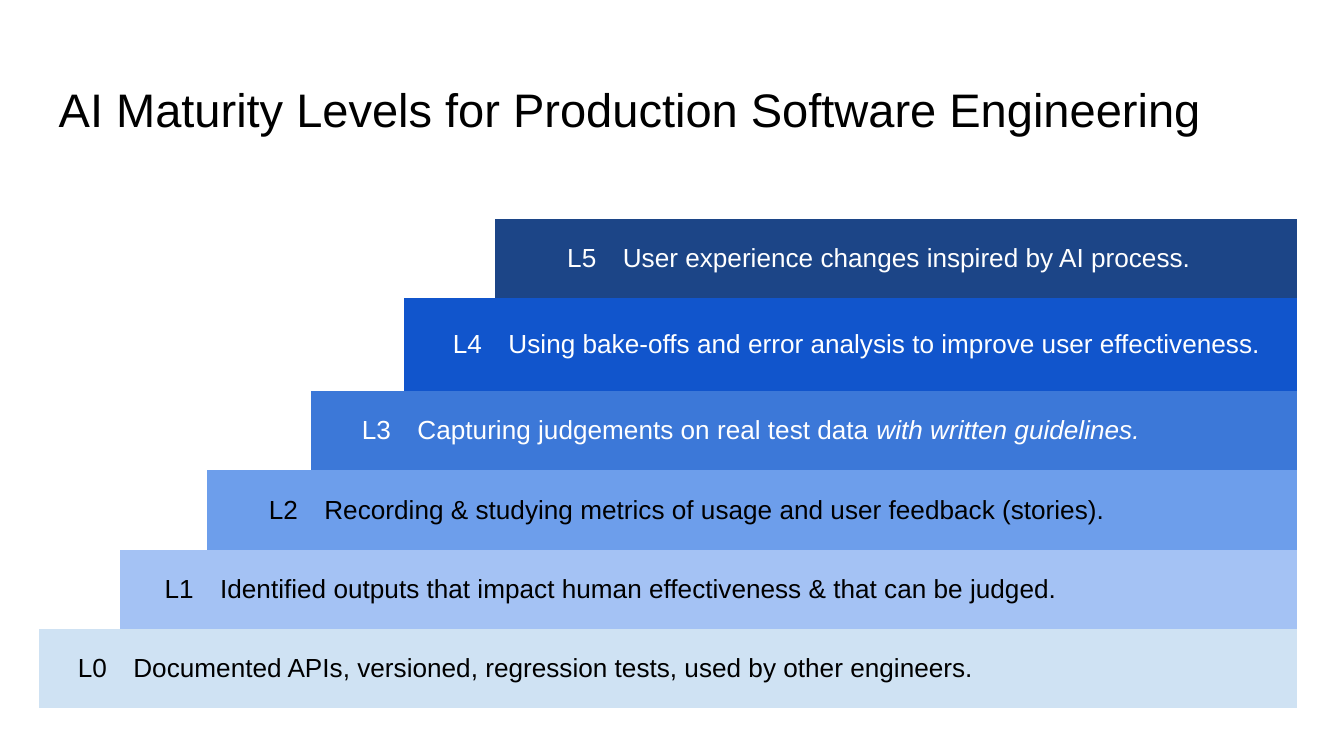
from typing import NamedTuple

from pptx import Presentation
from pptx.dml.color import RGBColor
from pptx.enum.text import MSO_ANCHOR, PP_ALIGN
from pptx.util import Cm, Pt

FONT = "Arial"
PAD = Cm(0.25)
NO_STYLE = "{2D5ABB26-0587-4C30-8999-92F81FD0307C}"


class Level(NamedTuple):
    text: str
    fill: str
    ink: str
    high: float = 1.5
    tail: str = ""


# From L0, the lowest step, up to L5
LEVELS = [
    Level("Documented APIs, versioned, regression tests, used by other engineers.",
          "CFE2F3", "000000"),
    Level("Identified outputs that impact human effectiveness & that can be judged.",
          "A4C2F4", "000000"),
    Level("Recording & studying metrics of usage and user feedback (stories).",
          "6D9EEB", "000000"),
    Level("Capturing judgements on real test data ", "3C78D8", "FFFFFF",
          tail="with written guidelines."),
    Level("Using bake-offs and error analysis to improve user effectiveness.",
          "1155CC", "FFFFFF", high=1.75),
    Level("User experience changes inspired by AI process.", "1C4587", "FFFFFF"),
]
WIDTHS = [1.53, 1.64, 1.97, 1.76, 1.72, 2.16, 13.0]


def color(code: str) -> RGBColor:
    return RGBColor.from_string(code)


def write(frame, text: str, *, size: float = 14, ink: str = "000000",
          align=PP_ALIGN.LEFT, italic: bool = False) -> None:
    """Add a run to the first paragraph of the frame."""
    line = frame.paragraphs[0]
    line.alignment = align
    run = line.add_run()
    run.text = text
    font = run.font
    font.name, font.size, font.italic = FONT, Pt(size), italic
    font.color.rgb = color(ink)


def pad(box) -> None:
    box.margin_left = box.margin_right = PAD
    box.margin_top = box.margin_bottom = PAD


def draw_title(slide, text: str) -> None:
    box = slide.shapes.add_textbox(Cm(0.86), Cm(1.24), Cm(23.67), Cm(1.6))
    frame = box.text_frame
    frame.word_wrap = True
    frame.vertical_anchor = MSO_ANCHOR.BOTTOM
    pad(frame)
    write(frame, text, size=25.2)


def draw_level(table, num: int, level: Level) -> None:
    """Fill one step: its label in column num, its text across the rest."""
    row = len(LEVELS) - 1 - num
    last = len(WIDTHS) - 1
    table.rows[row].height = Cm(level.high)
    label, body = table.cell(row, num), table.cell(row, num + 1)
    if num + 1 < last:
        body.merge(table.cell(row, last))
    for col in range(num, last + 1):
        cell = table.cell(row, col)
        cell.fill.solid()
        cell.fill.fore_color.rgb = color(level.fill)
        cell.vertical_anchor = MSO_ANCHOR.MIDDLE
        pad(cell)
    write(label.text_frame, f"L{num}", ink=level.ink, align=PP_ALIGN.RIGHT)
    write(body.text_frame, level.text, ink=level.ink)
    if level.tail:
        write(body.text_frame, level.tail, ink=level.ink, italic=True)


def draw_steps(slide) -> None:
    high = sum(level.high for level in LEVELS)
    frame = slide.shapes.add_table(len(LEVELS), len(WIDTHS), Cm(0.74), Cm(4.14),
                                   Cm(sum(WIDTHS)), Cm(high))
    table = frame.table
    table.first_row = table.horz_banding = False
    table._tbl.tblPr[0].text = NO_STYLE
    for col, width in zip(table.columns, WIDTHS):
        col.width = Cm(width)
    for cell in table.iter_cells():
        cell.fill.background()
    for num, level in enumerate(LEVELS):
        draw_level(table, num, level)


def main() -> None:
    deck = Presentation()
    deck.slide_width, deck.slide_height = Cm(25.4), Cm(14.29)
    slide = deck.slides.add_slide(deck.slide_layouts[6])
    draw_title(slide, "AI Maturity Levels for Production Software Engineering")
    draw_steps(slide)
    deck.save("out.pptx")


if __name__ == "__main__":
    main()
